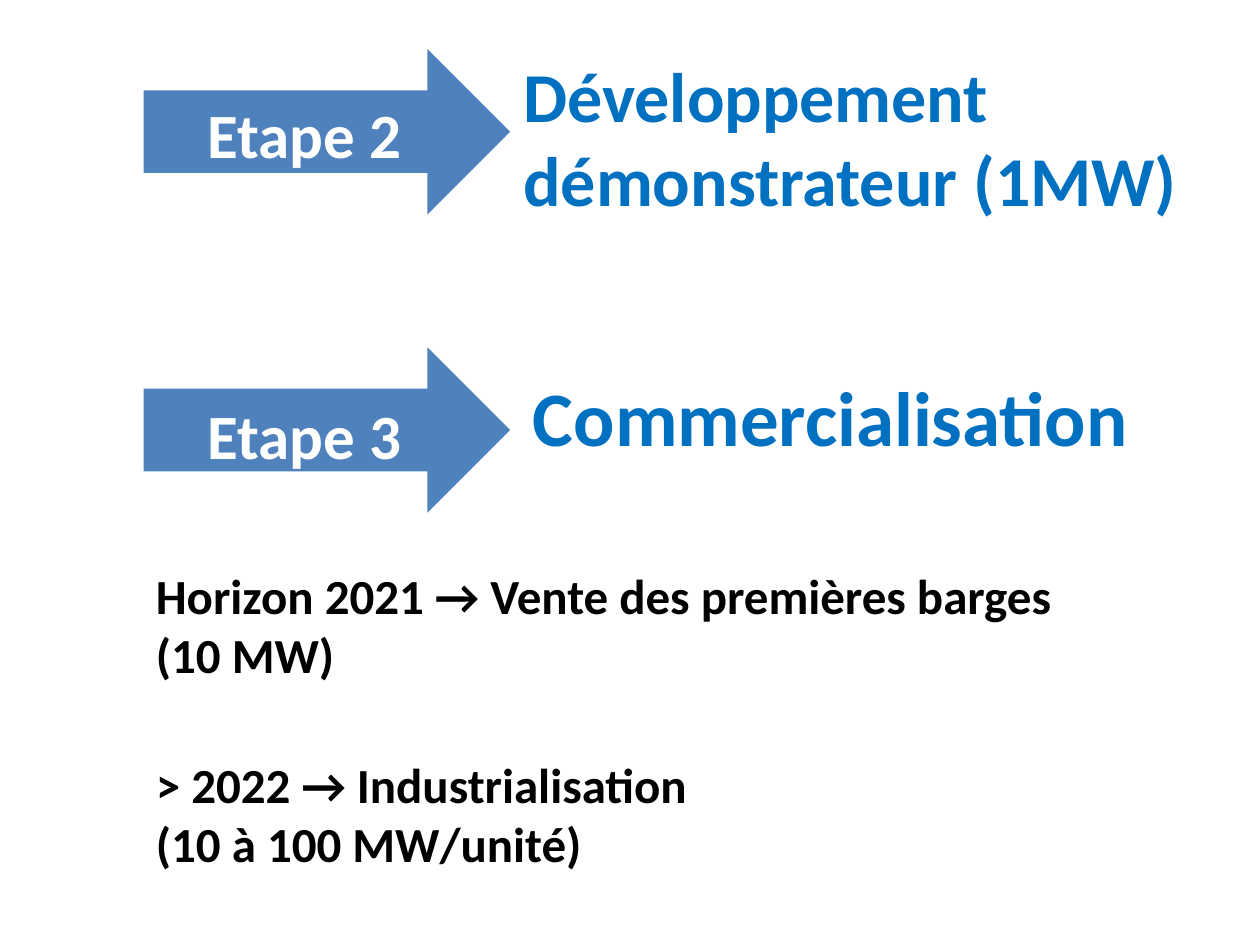
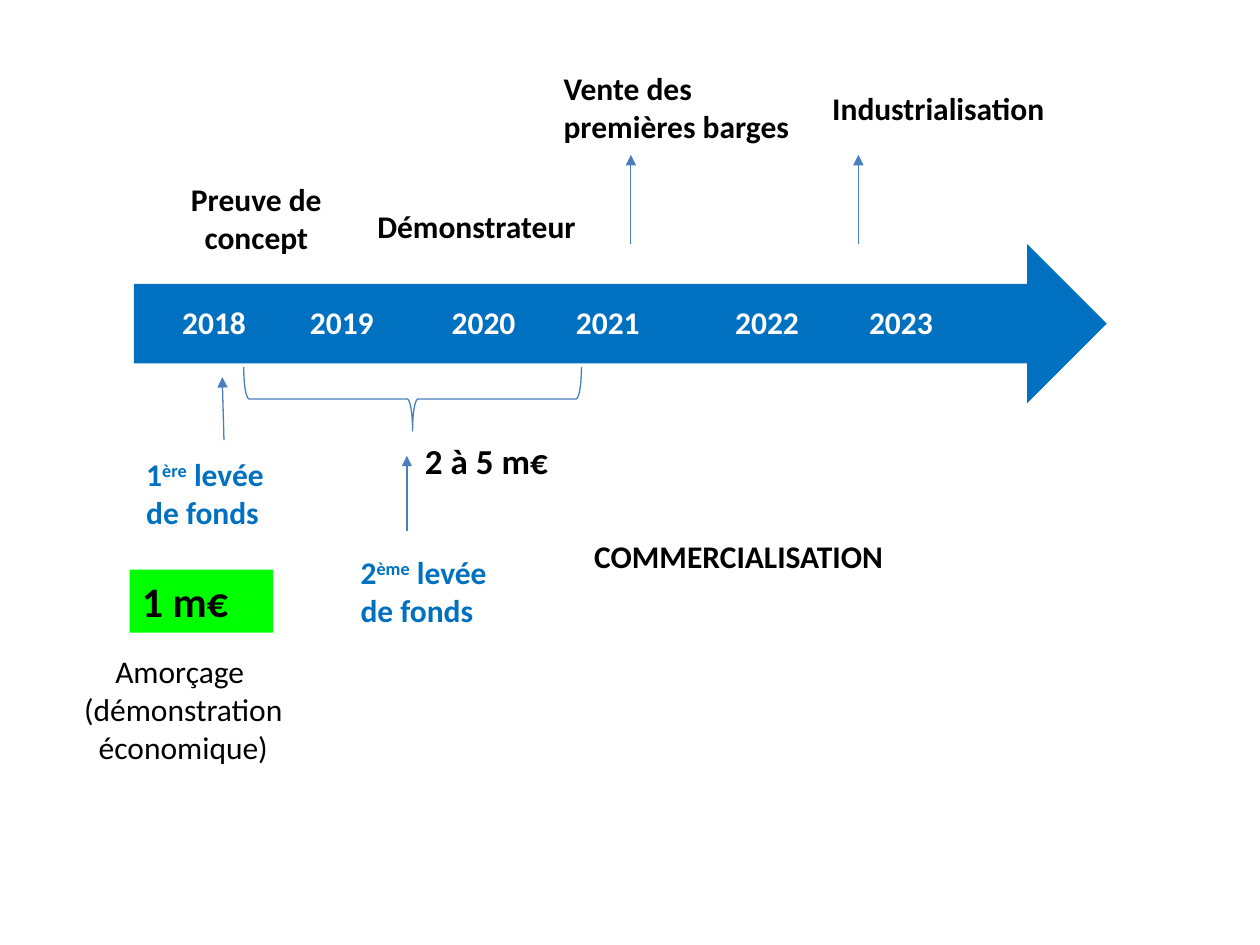
from dataclasses import dataclass

from lxml import etree
from pptx import Presentation
from pptx import util as u
from pptx.dml.color import RGBColor
from pptx.enum import shapes, text
from pptx.oxml.ns import qn

Pt = u.Pt
SHAPE = shapes.MSO_SHAPE
CENTER = text.PP_ALIGN.CENTER


@dataclass(frozen=True)
class Theme:
    font: str = "Calibri"
    accent: str = "0070C0"
    step: str = "4F81BD"
    line: str = "4B7EBC"
    budget: str = "00FF00"
    dark: str = "000000"
    light: str = "FFFFFF"
    headline: int = 40
    headline_large: int = 44
    step_label: int = 36
    detail: int = 28
    budget_size: int = 24
    amount: int = 20
    body: int = 18
    line_width: float = 0.75


T = Theme()


def rgb(value):
    return RGBColor.from_string(value)


def style_text(tf, size, color, bold=True, align=text.PP_ALIGN.LEFT):
    tf.word_wrap = True
    tf.auto_size = text.MSO_AUTO_SIZE.SHAPE_TO_FIT_TEXT
    tf.vertical_anchor = text.MSO_ANCHOR.TOP
    for p in tf.paragraphs:
        p.alignment = align
        for r in p.runs:
            r.font.name, r.font.size, r.font.bold = T.font, Pt(size), bold
            r.font.color.rgb = rgb(color)


def add_text(s, box, content, size=T.body, color=T.dark, **style):
    sp = s.shapes.add_textbox(*map(Pt, box))
    sp.text_frame.text = content
    style_text(sp.text_frame, size, color, **style)
    return sp


def add_shape(s, kind, box, fill=None):
    """Add a flat filled shape, or an outlined one when there is no fill."""
    sp = s.shapes.add_shape(kind, *map(Pt, box))
    sp.shadow.inherit = False
    if fill:
        sp.fill.solid()
        sp.fill.fore_color.rgb = rgb(fill)
        sp.line.fill.background()
    else:
        sp.fill.background()
        sp.line.color.rgb = rgb(T.line)
        sp.line.width = Pt(T.line_width)
    return sp


def add_arrow(s, x1, y1, x2, y2):
    cx = s.shapes.add_connector(shapes.MSO_CONNECTOR.STRAIGHT, *map(Pt, (x1, y1, x2, y2)))
    cx.line.color.rgb = rgb(T.line)
    cx.line.width = Pt(T.line_width)
    etree.SubElement(cx.line._get_or_add_ln(), qn("a:tailEnd"), type="triangle")
    etree.SubElement(cx._element.spPr, qn("a:effectLst"))


def set_tabs(p, stops):
    tabs = etree.SubElement(p._p.get_or_add_pPr(), qn("a:tabLst"))
    for stop in stops:
        etree.SubElement(tabs, qn("a:tab"), pos=str(Pt(stop)), algn="l")


def add_step(s, box, label, label_dy, headline, headline_box, size):
    """Draw a labelled step arrow; headline_box is relative to the arrow."""
    x, y, w, h = box
    dx, dy, hw, hh = headline_box
    add_text(s, (x + dx, y + dy, hw, hh), headline, size, T.accent)
    add_shape(s, SHAPE.RIGHT_ARROW, box, T.step)
    add_text(s, (x + 29.5, y + label_dy, 135, 51), label, T.step_label, T.light)


def add_funding_round(s, box, number, suffix):
    sp = add_text(s, box, number)
    p = sp.text_frame.paragraphs[0]
    for part in (suffix, " levée de fonds"):
        p.add_run().text = part
    style_text(sp.text_frame, T.body, T.accent)
    p.runs[1].font._element.set("baseline", "30000")


def add_year_arrow(s, box):
    x, y, w, h = box
    add_shape(s, SHAPE.RIGHT_ARROW, box, T.accent)
    years = add_text(s, (x + 20.5, y + 30, w - 40, 29),
                     "\t".join(str(year) for year in range(2018, 2024)), color=T.light)
    set_tabs(years.text_frame.paragraphs[0], (73, 154, 225, 316, 392.5))


def add_milestones(s, box):
    """Place the stages above the year arrow, given the arrow's box."""
    x, y, w, h = box
    for dx, dy, bw, bh, label, align in (
            (7.5, -40, 125, 51, "Preuve de concept", CENTER),
            (132, -25, 135, 29, "Démonstrateur", None),
            (238.5, -103.5, 153, 51, "Vente des premières barges", None),
            (392, -92, 153, 29, "Industrialisation", None)):
        add_text(s, (x + dx, y + dy, bw, bh), label, align=align)
    for dx in (284, 414):
        add_arrow(s, x + dx, y, x + dx, y - 51)


def add_funding(s, box):
    """Place the funding rounds below the year arrow, given the arrow's box."""
    x, y, w, h = box
    brace = add_shape(s, SHAPE.RIGHT_BRACE, (x + 141, y - 8, 36.5, 193))
    brace.rotation = 90
    add_arrow(s, x + 51.5, y + 112, x + 50.5, y + 76)
    add_arrow(s, x + 156, y + 164, x + 156, y + 121)
    add_funding_round(s, (x, y + 117, 96.5, 51), "1", "ère")
    add_funding_round(s, (x + 122.5, y + 173, 96.5, 51), "2", "ème")
    add_text(s, (x + 145, y + 108, 113, 32), "2 à 5 m€", T.amount, align=CENTER)
    budget = add_shape(s, SHAPE.RECTANGLE, (x - 2.5, y + 186, 82, 36), T.budget)
    budget.text_frame.text = "1 m€"
    style_text(budget.text_frame, T.budget_size, T.dark)
    add_text(s, (x - 51, y + 229.5, 158.5, 73), "Amorçage \n(démonstration économique)",
             bold=False, align=CENTER)
    add_text(s, (x + 256, y + 164, 210, 29), "COMMERCIALISATION")


def steps_slide(s):
    add_step(s, (82, 198.5, 209.5, 94.5), "Etape 3", 24.5,
             "Commercialisation", (215.5, 9, 380, 60), T.headline_large)
    add_step(s, (82, 28, 209.5, 94.5), "Etape 2", 23,
             "Développement démonstrateur (1MW)", (210, -1.5, 414, 104), T.headline)
    for y, detail in ((319.5, "Horizon 2021 → Vente des premières barges (10 MW)"),
                      (427.5, "> 2022 → Industrialisation\n(10 à 100 MW/unité)")):
        add_text(s, (82, y, 556, 75), detail, T.detail)


def timeline_slide(s):
    box = (76.5, 139.5, 556, 91)
    add_year_arrow(s, box)
    add_milestones(s, box)
    add_funding(s, box)


def main():
    prs = Presentation()
    prs.slide_width, prs.slide_height = Pt(720), Pt(540)
    for build in (steps_slide, timeline_slide):
        build(prs.slides.add_slide(prs.slide_layouts[6]))
    prs.save("out.pptx")


if __name__ == "__main__":
    main()
